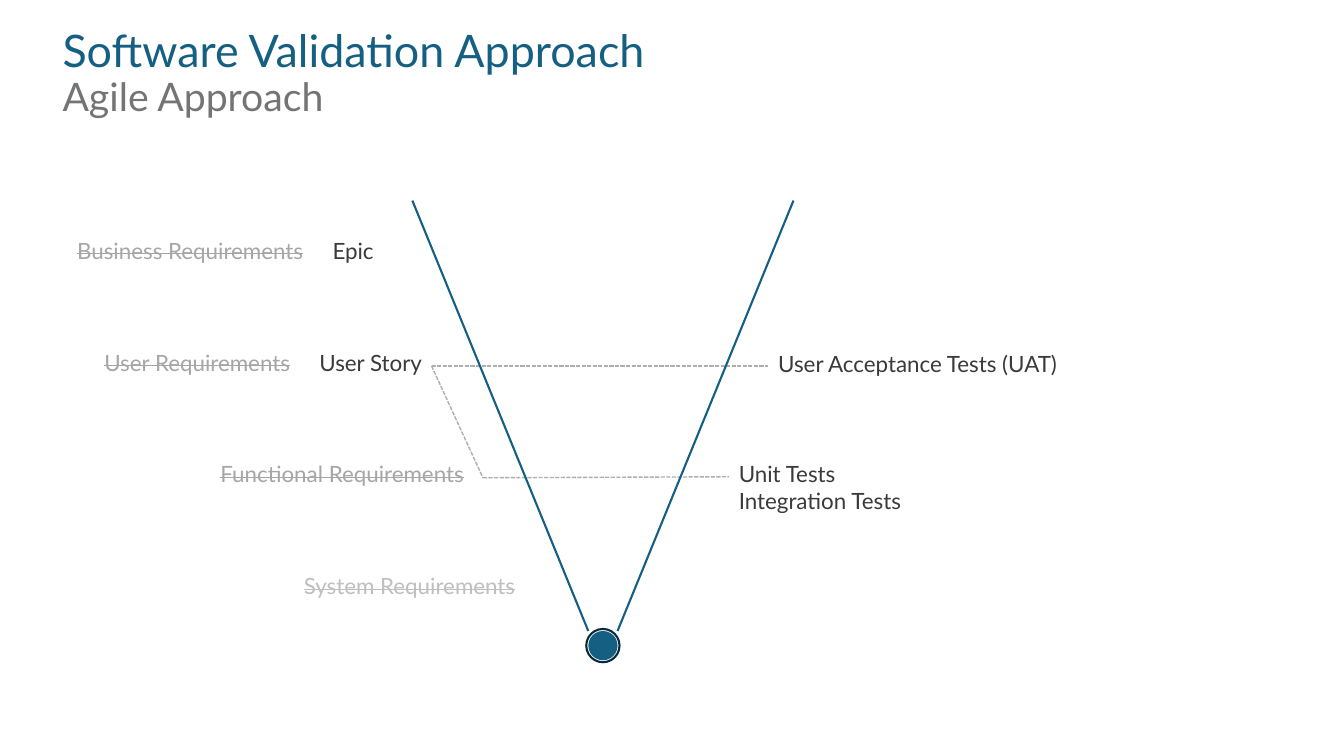
from dataclasses import dataclass

from lxml import etree
from pptx import Presentation
from pptx.dml.color import RGBColor
from pptx.enum.dml import MSO_LINE
from pptx.enum.shapes import MSO_CONNECTOR, MSO_SHAPE
from pptx.enum.text import MSO_ANCHOR, PP_ALIGN
from pptx.oxml.ns import qn
from pptx.util import Inches, Pt

STRAIGHT = MSO_CONNECTOR.STRAIGHT
OVAL = MSO_SHAPE.OVAL
DASH = MSO_LINE.SQUARE_DOT
TOP = MSO_ANCHOR.TOP
LEFT, RIGHT = PP_ALIGN.LEFT, PP_ALIGN.RIGHT


@dataclass(frozen=True)
class Theme:
    font: str = "Lato"
    blue: str = "156082"
    navy: str = "092A39"
    gray: str = "747474"
    ink: str = "3A3A3A"
    old: str = "A6A6A6"
    faint: str = "BFBFBF"
    link: str = "AEAEAE"
    head: int = 32
    sub: int = 28
    body: int = 16


THEME = Theme()


def rgb(color):
    return RGBColor.from_string(color)


def style(run, size, color, strike=False):
    font = run.font
    font.name, font.size = THEME.font, Pt(size)
    font.color.rgb = rgb(color)
    if strike:
        run._r.get_or_add_rPr().set("strike", "sngStrike")


def add_line(slide, start, end, color, width, dash=None):
    points = [Inches(v) for v in (*start, *end)]
    line = slide.shapes.add_connector(STRAIGHT, *points)
    line.line.color.rgb, line.line.width = rgb(color), Pt(width)
    if dash:
        line.line.dash_style = dash
    etree.SubElement(line._element.spPr, qn("a:effectLst"))


def add_text(slide, box, text, align=LEFT):
    frame = slide.shapes.add_textbox(*map(Inches, box)).text_frame
    frame.word_wrap = True
    frame.text = text
    for para in frame.paragraphs:
        para.alignment = align
        for run in para.runs:
            style(run, THEME.body, THEME.ink)
    return frame


def set_tabs(para, stops):
    tabs = etree.SubElement(para._p.get_or_add_pPr(), qn("a:tabLst"))
    for pos, align in stops:
        etree.SubElement(tabs, qn("a:tab"), pos=str(Inches(pos)), algn=align)


def add_title(slide, box, head, sub):
    title = slide.shapes.title
    title.left, title.top, title.width, title.height = map(Inches, box)
    frame = title.text_frame
    frame.word_wrap, frame.vertical_anchor = True, TOP
    frame.text = f"{head}\v{sub}"
    para = frame.paragraphs[0]
    para.alignment, para.line_spacing = LEFT, 0.9
    style(para.runs[0], THEME.head, THEME.blue)
    style(para.runs[1], THEME.sub, THEME.gray)


def add_old(slide, box, name, color):
    """A dropped requirement, struck through."""
    frame = add_text(slide, box, name, RIGHT)
    style(frame.paragraphs[0].runs[0], THEME.body, color, True)


def add_swap(slide, box, old, new, stop):
    """A dropped requirement and the agile item that replaces it."""
    gap = 0.29
    frame = add_text(slide, box, "")
    frame.margin_right = Inches(0.04)
    para = frame.paragraphs[0]
    set_tabs(para, [(stop, "r"), (stop + gap, "l")])
    for text, color, strike in ((f"\t{old}", THEME.old, True),
                                (f"\t{new}", THEME.ink, False)):
        run = para.add_run()
        run.text = text
        style(run, THEME.body, color, strike)


def add_dot(slide, mid, size, fill=None, edge=None):
    x, y = mid
    box = (x - size / 2, y - size / 2, size, size)
    dot = slide.shapes.add_shape(OVAL, *map(Inches, box))
    dot.shadow.inherit = False
    if fill:
        dot.fill.solid()
        dot.fill.fore_color.rgb = rgb(fill)
    else:
        dot.fill.background()
    if edge:
        dot.line.color.rgb, dot.line.width = rgb(edge), Pt(1.5)
    else:
        dot.line.fill.background()


def add_vee(slide, box):
    """Two mirrored arms that meet at a ringed dot."""
    left, top, width, height = box
    mid, dot, ring = left + width / 2, 0.29, 0.33
    foot = top + height - dot
    for side in (-1, 1):
        add_line(slide, (mid + side * width / 2, top),
                 (mid + side * dot / 2, foot), THEME.blue, 1.5)
    hub = (mid, foot + dot / 2)
    add_dot(slide, hub, dot, fill=THEME.blue)
    add_dot(slide, hub, ring, edge=THEME.navy)


def add_needs(slide, left, top):
    """Left side of the V: requirements in evenly spaced rows."""
    step, high = 1.11, 0.43
    rows = [top + i * step for i in range(4)]
    add_swap(slide, (left, rows[0], 3.41, high),
             "Business Requirements", "Epic", 2.52)
    add_swap(slide, (left + 0.13, rows[1], 3.76, high),
             "User Requirements", "User Story", 2.26)
    add_old(slide, (left + 1.31, rows[2], 3, high),
            "Functional Requirements", THEME.old)
    add_old(slide, (left + 1.82, rows[3], 3, high),
            "System Requirements", THEME.faint)


def add_tests(slide, left, top):
    """Right side of the V: matching tests."""
    add_text(slide, (left + 0.39, top, 3, 0.41), "User Acceptance Tests (UAT)")
    add_text(slide, (left, top + 1.1, 3, 0.75), "Unit Tests\nIntegration Tests")


def add_links(slide):
    story, turn = (4.28, 3.63), (4.79, 4.74)
    uat, unit = (7.62, 3.63), (7.23, 4.73)
    for start, end in ((story, uat), (turn, unit), (story, turn)):
        add_line(slide, start, end, THEME.link, 1, DASH)


def main():
    deck = Presentation()
    deck.slide_width, deck.slide_height = Inches(13.33), Inches(7.5)
    slide = deck.slides.add_slide(deck.slide_layouts[5])
    add_title(slide, (0.52, 0.24, 9.57, 1.1),
              "Software Validation Approach", "Agile Approach")
    add_needs(slide, 0.39, 2.3)
    add_tests(slide, 7.23, 3.42)
    add_links(slide)
    add_vee(slide, (4.09, 1.99, 3.78, 4.56))
    deck.save("out.pptx")


if __name__ == "__main__":
    main()
